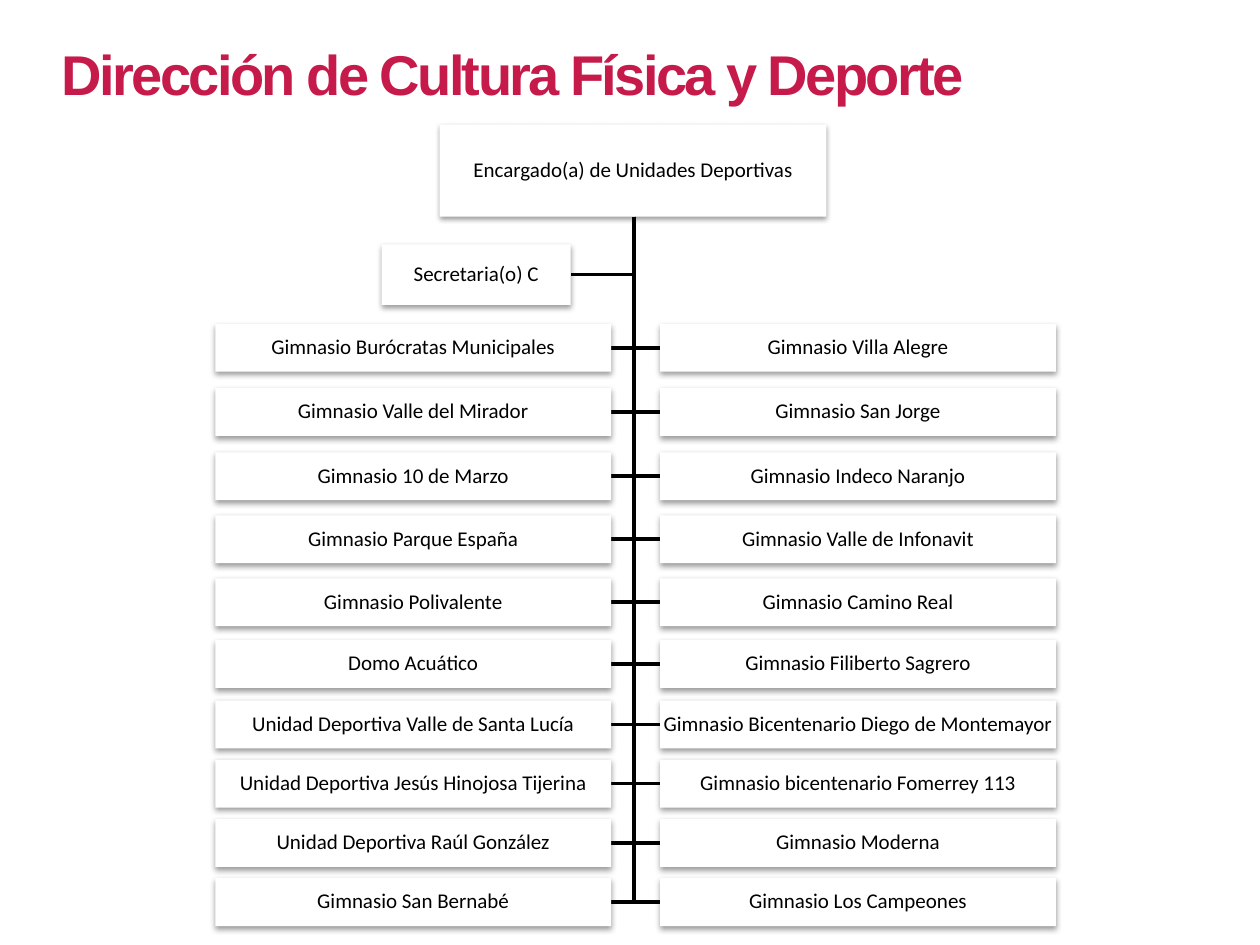
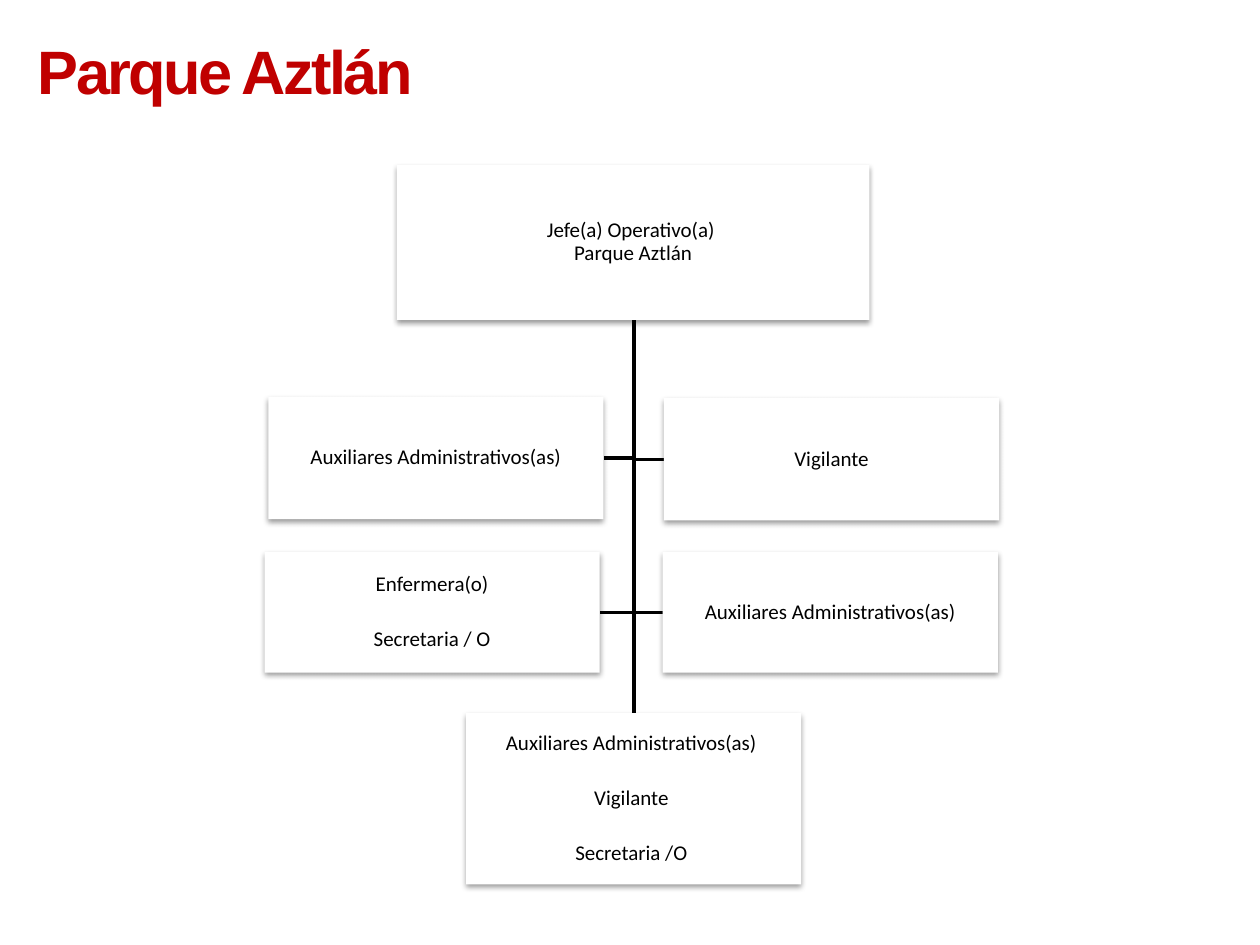
from lxml import etree
from pptx import Presentation
from pptx.dml.color import RGBColor
from pptx.enum.shapes import MSO_CONNECTOR, MSO_SHAPE
from pptx.enum.text import MSO_ANCHOR, MSO_AUTO_SIZE, PP_ALIGN
from pptx.oxml import parse_xml
from pptx.oxml.ns import nsdecls, qn
from pptx.util import Inches, Pt

CRIMSON = RGBColor(0xC5, 0x1A, 0x4A)
RED = RGBColor(0xC0, 0x00, 0x00)
BLACK = RGBColor(0x00, 0x00, 0x00)
WHITE = RGBColor(0xFF, 0xFF, 0xFF)
TRUNK_X = 5.03
BOX_SHADOW = (
    f'<a:effectLst {nsdecls("a")}>'
    '<a:outerShdw blurRad="40000" dist="20000" dir="5400000" rotWithShape="0">'
    '<a:srgbClr val="000000"><a:alpha val="38000"/></a:srgbClr>'
    '</a:outerShdw></a:effectLst>'
)


def write_text(shape, text, font="Calibri", size=12, color=BLACK, bold=False,
               align=PP_ALIGN.CENTER, anchor=MSO_ANCHOR.MIDDLE, line_spacing=0.9,
               gap=18.4, inset_x=0.01, inset_y=0.01, wrap=True, tracking=0):
    frame = shape.text_frame
    frame.auto_size = MSO_AUTO_SIZE.NONE
    frame.word_wrap = wrap
    frame.vertical_anchor = anchor
    frame.margin_left = frame.margin_right = Inches(inset_x)
    frame.margin_top = frame.margin_bottom = Inches(inset_y)
    frame.text = text
    for index, paragraph in enumerate(frame.paragraphs):
        paragraph.alignment = align
        paragraph.line_spacing = line_spacing
        paragraph.space_before = Pt(gap if index else 0)
        for run in paragraph.runs:
            run.font.name = font
            run.font.size = Pt(size)
            run.font.bold = bold
            run.font.color.rgb = color
            if tracking:
                run._r.get_or_add_rPr().set("spc", str(int(tracking * 100)))


venue_rows = [
    (2.57, "Gimnasio Burócratas Municipales", "Gimnasio Villa Alegre"),
    (3.08, "Gimnasio Valle del Mirador", "Gimnasio San Jorge"),
    (3.59, "Gimnasio 10 de Marzo", "Gimnasio Indeco Naranjo"),
    (4.09, "Gimnasio Parque España", "Gimnasio Valle de Infonavit"),
    (4.59, "Gimnasio Polivalente", "Gimnasio Camino Real"),
    (5.08, "Domo Acuático", "Gimnasio Filiberto Sagrero"),
    (5.56, "Unidad Deportiva Valle de Santa Lucía",
     "Gimnasio Bicentenario Diego de Montemayor"),
    (6.03, "Unidad Deportiva Jesús Hinojosa Tijerina",
     "Gimnasio bicentenario Fomerrey 113"),
    (6.5, "Unidad Deportiva Raúl González", "Gimnasio Moderna"),
    (6.97, "Gimnasio San Bernabé", "Gimnasio Los Campeones"),
]
sports_boxes = [
    (3.49, 0.99, 3.07, 0.73, "Encargado(a) de Unidades Deportivas"),
    (3.03, 1.94, 1.5, 0.48, "Secretaria(o) C"),
]
for top, left_venue, right_venue in venue_rows:
    sports_boxes.append((1.71, top, 3.14, 0.38, left_venue))
    sports_boxes.append((5.24, top, 3.14, 0.38, right_venue))

park_boxes = [
    (3.15, 1.31, 3.75, 1.23, "Jefe(a) Operativo(a) \vParque Aztlán"),
    (2.13, 3.15, 2.66, 0.97, "Auxiliares Administrativos(as)"),
    (5.27, 3.16, 2.66, 0.97, "Vigilante"),
    (2.1, 4.38, 2.66, 0.96, "Enfermera(o)\nSecretaria / O"),
    (5.26, 4.38, 2.66, 0.96, "Auxiliares Administrativos(as)"),
    (3.7, 5.66, 2.66, 1.36,
     "Auxiliares Administrativos(as) \nVigilante \nSecretaria /O "),
]

charts = [
    ("Dirección de Cultura Física y Deporte", (0.39, 0.26, 7.69, 0.64),
     32, CRIMSON, sports_boxes),
    ("Parque Aztlán", (0.2, 0.21, 3.54, 0.69), 35, RED, park_boxes),
]

prs = Presentation()
prs.slide_width, prs.slide_height = Inches(10), Inches(7.5)

for heading, heading_area, heading_size, heading_color, boxes in charts:
    slide = prs.slides.add_slide(prs.slide_layouts[5])
    title = slide.shapes.title
    title.left, title.top, title.width, title.height = map(Inches, heading_area)
    write_text(title, heading, font="Arial", size=heading_size, color=heading_color,
               bold=True, align=PP_ALIGN.LEFT, anchor=MSO_ANCHOR.TOP, line_spacing=1,
               inset_x=0.1, inset_y=0.05, wrap=False, tracking=-1.5)

    head, *reports = boxes
    trunk_x, trunk_top = Inches(TRUNK_X), Inches(head[1] + head[3])
    for left, top, width, height, _ in reports:
        if left < TRUNK_X < left + width:
            link = slide.shapes.add_connector(
                MSO_CONNECTOR.STRAIGHT, trunk_x, trunk_top, trunk_x, Inches(top))
            etree.SubElement(link._element.spPr, qn("a:effectLst"))
        else:
            middle = Inches(top + height / 2)
            edge = Inches(left if left > TRUNK_X else left + width)
            elbow = slide.shapes.build_freeform(trunk_x, trunk_top)
            elbow.add_line_segments([(trunk_x, middle), (edge, middle)], close=False)
            link = elbow.convert_to_shape()
            link.fill.background()
            link.shadow.inherit = False
        link.line.color.rgb = BLACK
        link.line.width = Pt(2)

    for left, top, width, height, role in boxes:
        box = slide.shapes.add_shape(
            MSO_SHAPE.RECTANGLE, Inches(left), Inches(top), Inches(width), Inches(height))
        box.fill.solid()
        box.fill.fore_color.rgb = WHITE
        box.line.fill.background()
        box._element.spPr.append(parse_xml(BOX_SHADOW))
        write_text(box, role)

prs.save("out.pptx")
